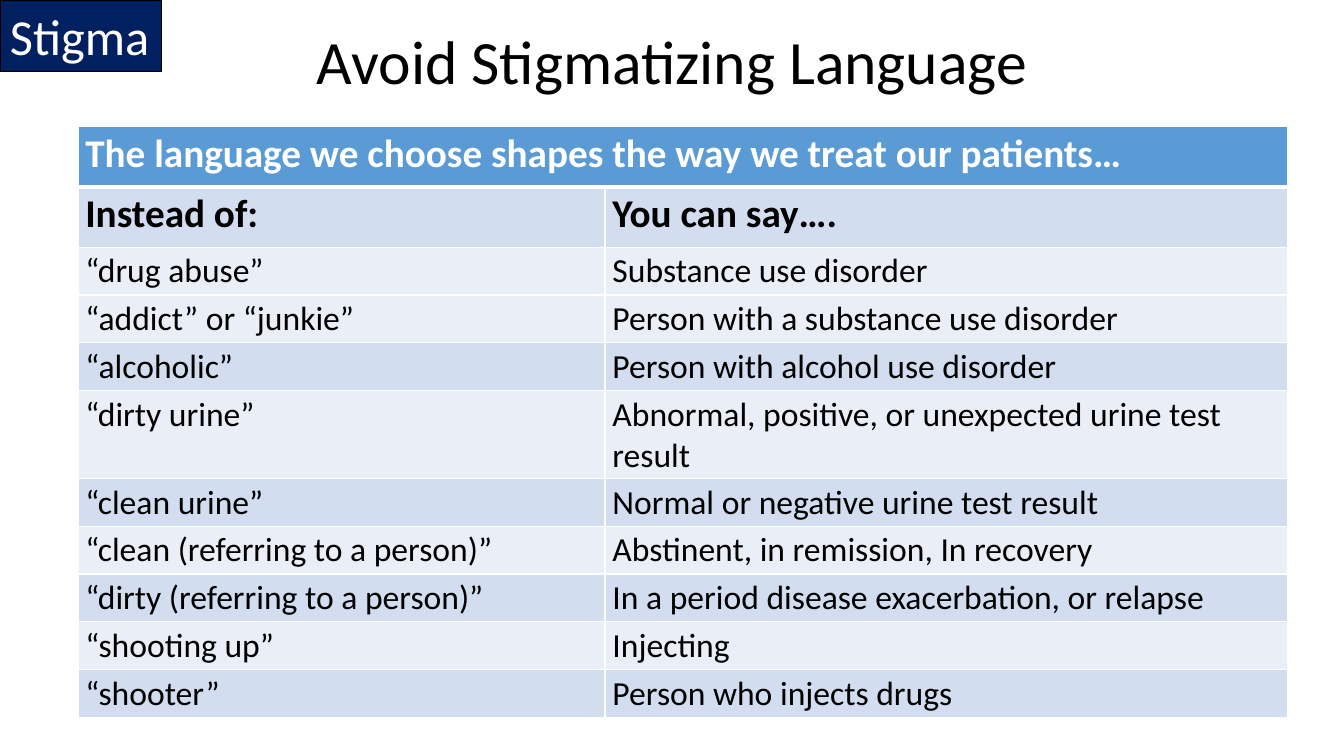
import pptx
import pptx.util
import pptx.dml.color
import pptx.enum.shapes
import pptx.enum.text
import pptx.oxml
import pptx.oxml.ns
from dataclasses import dataclass


@dataclass(frozen=True)
class Theme:
    font: str = "Calibri"
    white: str = "FFFFFF"
    black: str = "000000"
    navy: str = "002060"
    blue: str = "5B9BD5"
    dark: str = "D2DEEF"
    light: str = "EAEFF7"
    title: int = 44
    badge: int = 36
    head: int = 28
    body: int = 24


class Deck:
    """Draw styled parts on a slide, placed on a grid of 100 columns by 100 rows."""

    def __init__(self, theme):
        self.theme = theme
        self.show = pptx.Presentation()
        self.show.slide_width = pptx.util.Inches(13.33)
        self.show.slide_height = pptx.util.Inches(7.5)
        self.slide = self.show.slides.add_slide(self.show.slide_layouts[6])

    def col(self, count):
        return round(self.show.slide_width * count / 100)

    def row(self, count):
        return round(self.show.slide_height * count / 100)

    def area(self, left, top, width, height):
        return self.col(left), self.row(top), self.col(width), self.row(height)

    def tint(self, hue):
        return pptx.dml.color.RGBColor.from_string(hue)

    def paint(self, item, hue):
        item.fill.solid()
        item.fill.fore_color.rgb = self.tint(hue)

    def label(self, frame, text, size, hue, bold=False):
        para = frame.paragraphs[0]
        para.alignment = pptx.enum.text.PP_ALIGN.LEFT
        run = para.add_run()
        run.text = text
        run.font.name = self.theme.font
        run.font.size = pptx.util.Pt(size)
        run.font.bold = bold
        run.font.color.rgb = self.tint(hue)
        return para

    def title(self, text, *place):
        frame = self.slide.shapes.add_textbox(*self.area(*place)).text_frame
        frame.word_wrap = True
        frame.vertical_anchor = pptx.enum.text.MSO_ANCHOR.MIDDLE
        para = self.label(frame, text, self.theme.title, self.theme.black)
        para.alignment = pptx.enum.text.PP_ALIGN.CENTER
        para.line_spacing = 0.9

    def badge(self, text, *place):
        kind = pptx.enum.shapes.MSO_SHAPE.RECTANGLE
        box = self.slide.shapes.add_shape(kind, *self.area(*place))
        box.shadow.inherit = False
        self.paint(box, self.theme.navy)
        box.line.color.rgb = self.tint(self.theme.black)
        box.line.width = pptx.util.Pt(1)
        frame = box.text_frame
        frame.word_wrap = False
        frame.auto_size = pptx.enum.text.MSO_AUTO_SIZE.SHAPE_TO_FIT_TEXT
        frame.vertical_anchor = pptx.enum.text.MSO_ANCHOR.TOP
        self.label(frame, text, self.theme.badge, self.theme.white)

    def edge(self, cell, side, width):
        space = pptx.oxml.ns.nsdecls("a")
        line = pptx.oxml.parse_xml(
            f'<a:{side} {space} w="{pptx.util.Pt(width)}"><a:solidFill>'
            f'<a:srgbClr val="{self.theme.white}"/></a:solidFill></a:{side}>')
        cell._tc.get_or_add_tcPr().append(line)

    def cell(self, cell, index, text):
        theme = self.theme
        cell.margin_left = cell.margin_right = pptx.util.Pt(5.3)
        cell.margin_top = cell.margin_bottom = pptx.util.Pt(2.65)
        for side in ("lnL", "lnR", "lnT", "lnB"):
            thick = (index, side) in ((0, "lnB"), (1, "lnT"))
            self.edge(cell, side, 3 if thick else 1)
        deep = index == 1 or index > 2 and index % 2 == 0
        self.paint(cell, theme.blue if index == 0 else theme.dark if deep else theme.light)
        if text:
            top = index < 2
            self.label(cell.text_frame, text, theme.head if top else theme.body,
                       theme.black if index else theme.white, top)

    def table(self, data, left, top, widths, tall, short):
        heights = [tall if index < 2 else short for index in range(len(data))]
        place = self.area(left, top, sum(widths), sum(heights))
        grid = self.slide.shapes.add_table(len(data), len(widths), *place).table
        for column, width in zip(grid.columns, widths):
            column.width = self.col(width)
        for index, texts in enumerate(data):
            grid.rows[index].height = self.row(heights[index])
            for spot, text in enumerate(texts):
                self.cell(grid.cell(index, spot), index, text)
        grid.cell(0, 0).merge(grid.cell(0, len(widths) - 1))


def main():
    terms = [
        ("The language we choose shapes the way we treat our patients…", ""),
        ("Instead of:", "You can say…."),
        ("“drug abuse”", "Substance use disorder"),
        ("“addict” or “junkie”", "Person with a substance use disorder"),
        ("“alcoholic”", "Person with alcohol use disorder"),
        ("“dirty urine”", "Abnormal, positive, or unexpected urine test result"),
        ("“clean urine”", "Normal or negative urine test result"),
        ("“clean (referring to a person)”", "Abstinent, in remission, In recovery"),
        ("“dirty (referring to a person)”", "In a period disease exacerbation, or relapse"),
        ("“shooting up”", "Injecting"),
        ("“shooter”", "Person who injects drugs"),
    ]
    deck = Deck(Theme())
    deck.title("Avoid Stigmatizing Language", 6.9, 1.73, 86.27, 13.73)
    deck.table(terms, 5.8, 16.7, (39.22, 50.8), 8, 6.13)
    deck.badge("Stigma", 0, 0, 12, 9.47)
    deck.show.save("out.pptx")


if __name__ == "__main__":
    main()
